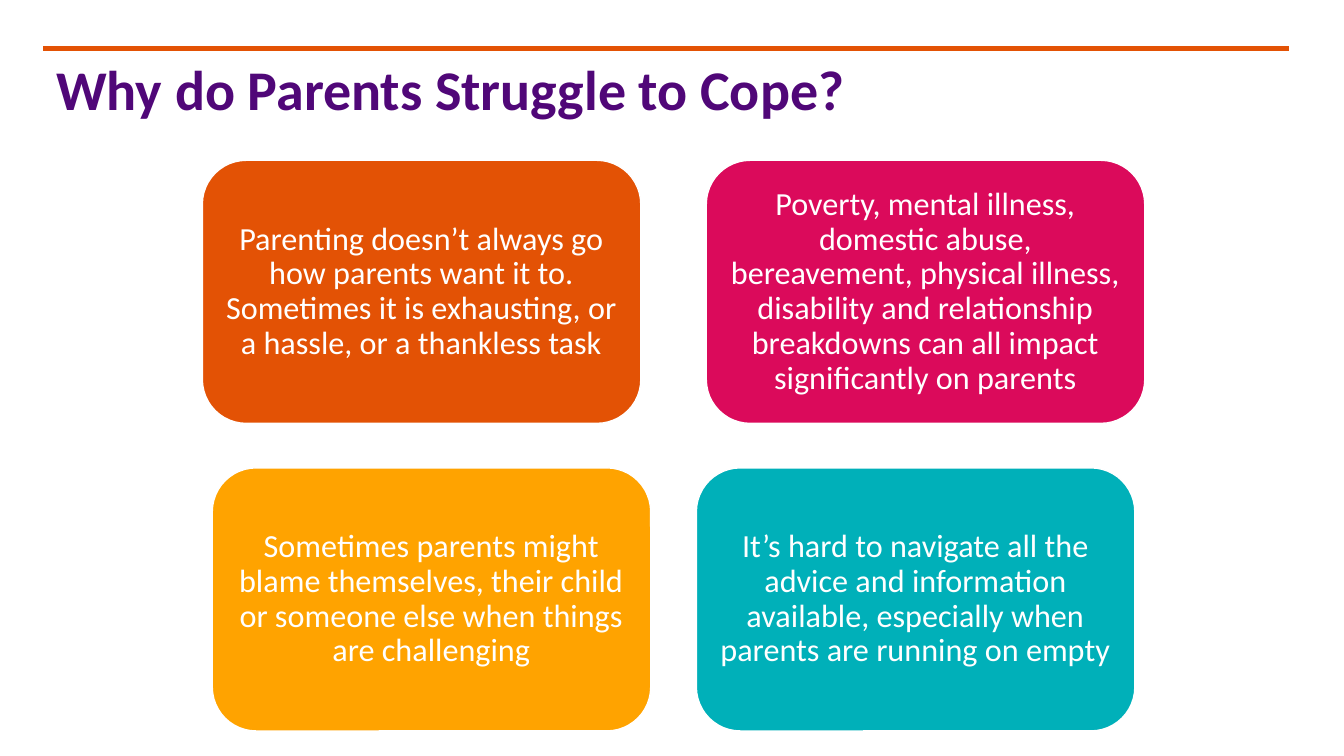
from dataclasses import dataclass

from lxml.etree import SubElement
from pptx import Presentation
from pptx.dml.color import RGBColor
from pptx.enum.shapes import MSO_CONNECTOR, MSO_SHAPE
from pptx.enum.text import MSO_ANCHOR, PP_ALIGN
from pptx.oxml.ns import qn
from pptx.util import Cm, Pt


@dataclass(frozen=True)
class Theme:
    font: str = "Calibri"
    purple: RGBColor = RGBColor(0x50, 0x07, 0x78)
    orange: RGBColor = RGBColor(0xE3, 0x52, 0x05)
    pink: RGBColor = RGBColor(0xDB, 0x0A, 0x5B)
    amber: RGBColor = RGBColor(0xFF, 0xA3, 0x00)
    teal: RGBColor = RGBColor(0x00, 0xB0, 0xB9)
    white: RGBColor = RGBColor(0xFF, 0xFF, 0xFF)
    title_size: Pt = Pt(40)
    title_leading: Pt = Pt(41)
    card_size: Pt = Pt(23)


THEME = Theme()

REASON_ROWS = [
    (1.65, [
        ("Parenting doesn’t always go how parents want it to. Sometimes it is "
         "exhausting, or a hassle, or a thankless task", THEME.orange),
        ("Poverty, mental illness, domestic abuse, bereavement, physical illness, "
         "disability and relationship breakdowns can all impact significantly on "
         "parents", THEME.pink),
    ]),
    (1.15, [
        ("Sometimes parents might blame themselves, their child or someone else "
         "when things are challenging", THEME.amber),
        ("It’s hard to navigate all the advice and information available, "
         "especially when parents are running on empty", THEME.teal),
    ]),
]


def apply_format(target, values):
    for attribute, value in values.items():
        setattr(target, attribute, value)


def write_text(frame, wording, color, frame_format, paragraph_format, font_format):
    apply_format(frame, {"word_wrap": True, **frame_format})
    paragraph = frame.paragraphs[0]
    apply_format(paragraph, paragraph_format)
    run = paragraph.add_run()
    run.text = wording
    apply_format(run.font, {"name": THEME.font, **font_format})
    run.font.color.rgb = color


def add_rule(slide, left, top, width):
    rule = slide.shapes.add_connector(
        MSO_CONNECTOR.STRAIGHT, Cm(left), Cm(top), Cm(left + width), Cm(top))
    rule.line.color.rgb = THEME.orange
    rule.line.width = Pt(3)
    SubElement(rule._element.spPr, qn("a:effectLst"))


def add_heading(slide, left, top, width, height):
    heading = slide.shapes.add_textbox(Cm(left), Cm(top), Cm(width), Cm(height))
    write_text(
        heading.text_frame, "Why do Parents Struggle to Cope?", THEME.purple,
        {"margin_left": 0, "margin_top": Cm(0.41),
         "margin_right": Cm(0.25), "margin_bottom": Cm(0.13)},
        {"line_spacing": THEME.title_leading},
        {"size": THEME.title_size, "bold": True})


def add_card(slide, left, top, width, height, reason, color):
    card = slide.shapes.add_shape(
        MSO_SHAPE.ROUNDED_RECTANGLE, Cm(left), Cm(top), Cm(width), Cm(height))
    card.shadow.inherit = False
    card.fill.solid()
    card.fill.fore_color.rgb = color
    card.line.color.rgb = THEME.white
    card.line.width = Pt(1)
    margins = {f"margin_{side}": Cm(0.25)
               for side in ("left", "top", "right", "bottom")}
    write_text(
        card.text_frame, reason, THEME.white,
        {"vertical_anchor": MSO_ANCHOR.MIDDLE, **margins},
        {"alignment": PP_ALIGN.CENTER, "line_spacing": 0.9},
        {"size": THEME.card_size})


def add_reasons(slide, left, top, width, height):
    card_width, card_height = 11.05, 6.63
    row_step = (height - card_height) / (len(REASON_ROWS) - 1)
    for row, (gap, reasons) in enumerate(REASON_ROWS):
        row_width = len(reasons) * (card_width + gap) - gap
        row_left = left + (width - row_width) / 2
        for column, (reason, color) in enumerate(reasons):
            add_card(slide, row_left + column * (card_width + gap),
                     top + row * row_step, card_width, card_height, reason, color)


def main():
    deck = Presentation()
    apply_format(deck, {"slide_width": Cm(33.87), "slide_height": Cm(19.05)})
    slide = deck.slides.add_slide(deck.slide_layouts[6])
    add_rule(slide, 1.09, 1.22, 31.4)
    add_heading(slide, 1.42, 1.22, 30.1, 3.48)
    add_reasons(slide, 5.1, 4.04, 23.75, 14.38)
    deck.save("out.pptx")


if __name__ == "__main__":
    main()
